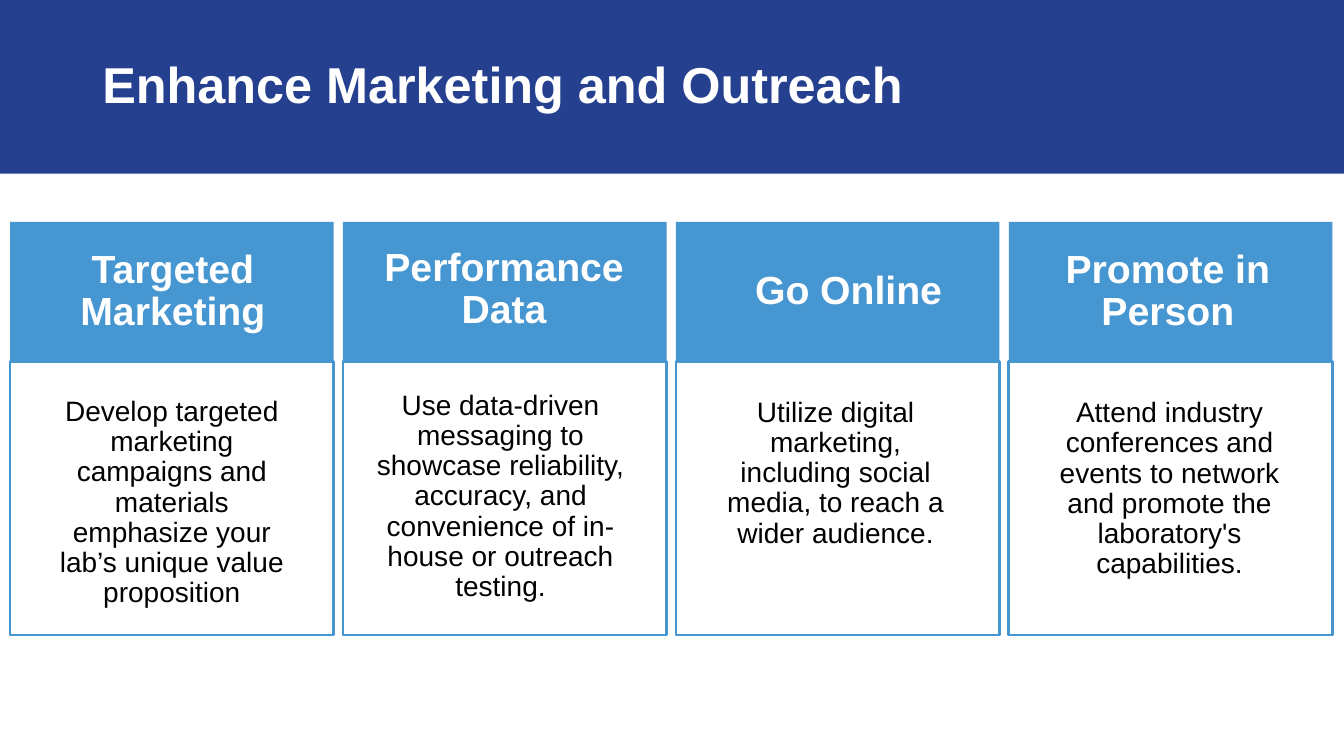
from pptx import Presentation
from pptx.dml.color import RGBColor
from pptx.enum.shapes import MSO_SHAPE
from pptx.enum.text import MSO_ANCHOR, PP_ALIGN
from pptx.util import Pt

RECT = MSO_SHAPE.RECTANGLE
TOP, MIDDLE = MSO_ANCHOR.TOP, MSO_ANCHOR.MIDDLE
LEFT, CENTER, RIGHT = PP_ALIGN.LEFT, PP_ALIGN.CENTER, PP_ALIGN.RIGHT

NAVY = RGBColor(0x25, 0x40, 0x8F)
BLUE = RGBColor(0x46, 0x96, 0xD2)
WHITE = RGBColor(0xFF, 0xFF, 0xFF)
BLACK = RGBColor(0x00, 0x00, 0x00)

SLIDE_W, SLIDE_H = 960, 540
CARD_W, CARD_H, CARD_PITCH = 231.1, 295.2, 237.8
HEAD_H = 100.1

# Heading lines, heading alignment, heading shift (x, y),
# body text, body shift (x, y), extra body width
CARDS = [
    (["Targeted Marketing"], CENTER, (0.7, 0),
     "Develop targeted marketing campaigns and materials emphasize your "
     "lab’s unique value proposition", (0, -3.6), 0),
    (["Performance", "Data"], CENTER, (-0.5, -1.5),
     "Use data-driven messaging to showcase reliability, accuracy, and "
     "convenience of in-house or outreach testing.", (-10.5, -8), 15),
    (["Go Online"], RIGHT, (-18, 0),
     "Utilize digital marketing, including social media, to reach a wider "
     "audience.", (-1.5, -3), 0),
    (["Promote in Person"], CENTER, (-2, 0),
     "Attend industry conferences and events to network and promote the "
     "laboratory's capabilities.", (-0.7, -2.7), 0),
]


def add_rect(s, x, y, w, h, fill, line=None):
    sp = s.shapes.add_shape(RECT, Pt(x), Pt(y), Pt(w), Pt(h))
    sp.shadow.inherit = False
    sp.fill.solid()
    sp.fill.fore_color.rgb = fill
    if line is None:
        sp.line.fill.background()
    else:
        sp.line.color.rgb = line
        sp.line.width = Pt(2)


def add_text(s, x, y, w, h, lines, size, color, bold, align, anchor, inset):
    tf = s.shapes.add_textbox(Pt(x), Pt(y), Pt(w), Pt(h)).text_frame
    tf.word_wrap = True
    tf.vertical_anchor = anchor
    tf.margin_left = tf.margin_right = Pt(inset[0])
    tf.margin_top = tf.margin_bottom = Pt(inset[1])
    for i, line in enumerate(lines):
        p = tf.add_paragraph() if i else tf.paragraphs[0]
        p.alignment = align
        p.line_spacing = 0.9
        r = p.add_run()
        r.text = line
        r.font.name = "Arial"
        r.font.size = Pt(size)
        r.font.bold = bold
        r.font.color.rgb = color


def add_banner(s, x, y, w, h):
    add_rect(s, x, y, w, h, NAVY)
    add_text(s, x + 66, y + 16, w - 146, h - 32,
             ["Enhance Marketing and Outreach"],
             36, WHITE, True, LEFT, MIDDLE, (7.2, 3.6))


def add_card(s, x, y, w, h, card):
    head, align, (head_dx, head_dy), body, (body_dx, body_dy), extra_w = card
    body_y, body_h = y + HEAD_H, h - HEAD_H
    # Heading block
    add_rect(s, x, y, w, HEAD_H, BLUE)
    add_text(s, x + head_dx, y + head_dy, w, HEAD_H, head,
             28, WHITE, True, align, MIDDLE, (23, 23))
    # Outlined body
    add_rect(s, x, body_y, w, body_h, WHITE, BLUE)
    add_text(s, x + body_dx, body_y + body_dy, w + extra_w, body_h, [body],
             20, BLACK, False, CENTER, TOP, (28.8, 28.8))


def main():
    prs = Presentation()
    prs.slide_width, prs.slide_height = Pt(SLIDE_W), Pt(SLIDE_H)
    s = prs.slides.add_slide(prs.slide_layouts[6])
    add_banner(s, 0, 0, SLIDE_W, 124)
    for i, card in enumerate(CARDS):
        add_card(s, 7.2 + i * CARD_PITCH, 158.4, CARD_W, CARD_H, card)
    prs.save("out.pptx")


if __name__ == "__main__":
    main()
